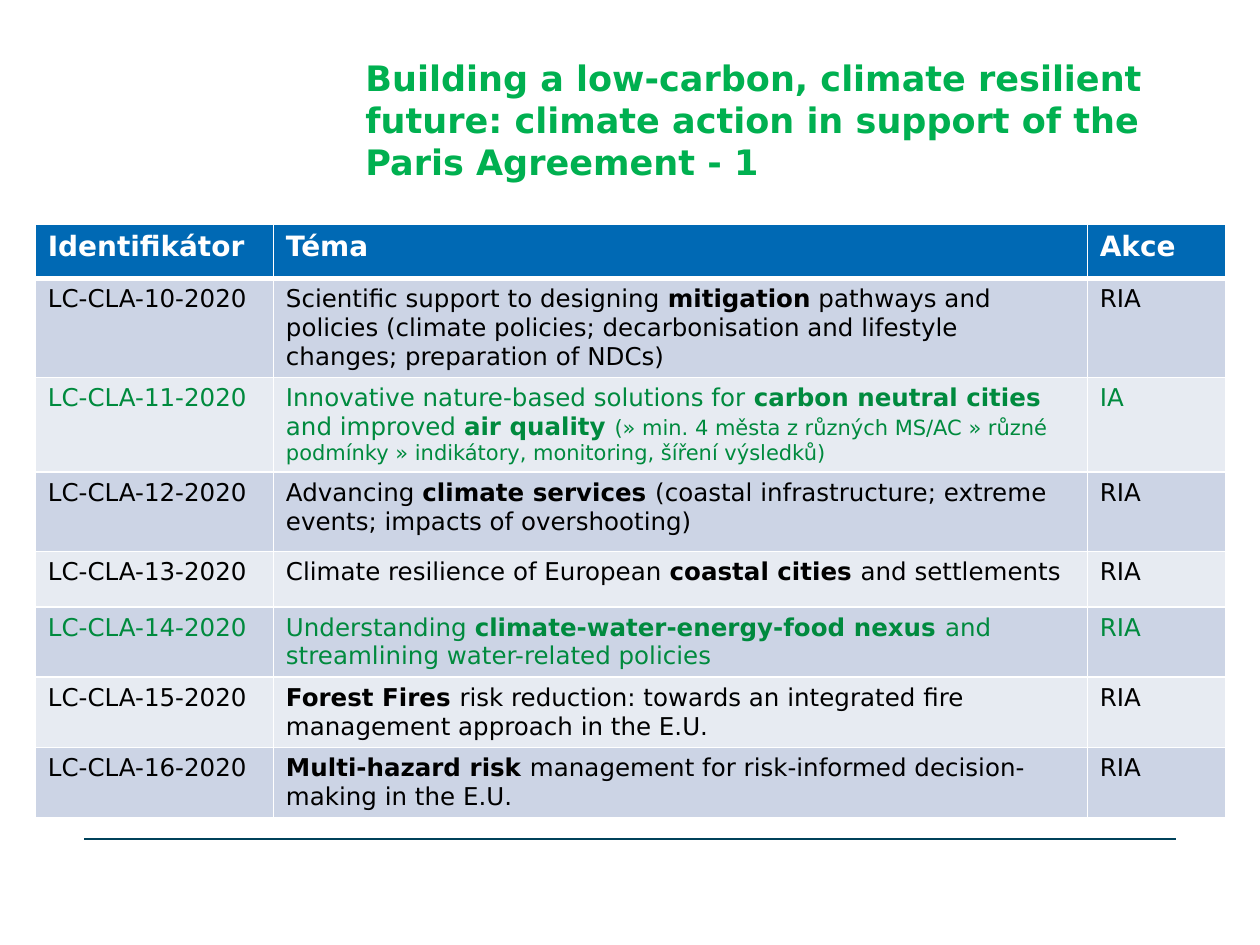
from dataclasses import dataclass

from lxml.etree import SubElement
from pptx import Presentation
from pptx.dml.color import RGBColor
from pptx.enum.shapes import MSO_CONNECTOR
from pptx.enum.text import MSO_ANCHOR, MSO_AUTO_SIZE, PP_ALIGN
from pptx.oxml.ns import qn
from pptx.util import Inches, Pt


@dataclass(frozen=True)
class Theme:
    font: str = "DejaVu Sans"
    title: str = "00B050"
    header: str = "0069B4"
    bands: tuple = ("CCD4E5", "E7EBF2")
    text: str = "000000"
    highlight: str = "008A3E"
    white: str = "FFFFFF"
    rule: str = "00415A"
    title_size: int = 20
    header_size: int = 16
    body_size: int = 14
    note_size: int = 12


HEADINGS = ("Identifikátor", "Téma", "Akce")
# Asterisks enclose bold words; a bar starts the smaller note.
TOPICS = [
    ("LC-CLA-10-2020", "Scientific support to designing *mitigation* pathways and policies "
     "(climate policies; decarbonisation and lifestyle changes; preparation of NDCs)", "RIA"),
    ("LC-CLA-11-2020", "Innovative nature-based solutions for *carbon neutral cities *"
     "and improved *air quality *|(» min. 4 města z různých MS/AC » různé podmínky "
     "» indikátory, monitoring, šíření výsledků)", "IA"),
    ("LC-CLA-12-2020", "Advancing *climate services *(coastal infrastructure; "
     "extreme events; impacts of overshooting)", "RIA"),
    ("LC-CLA-13-2020", "Climate resilience of European *coastal cities *and settlements", "RIA"),
    ("LC-CLA-14-2020", "Understanding *climate-water-energy-food nexus *and streamlining "
     "water-related policies", "RIA"),
    ("LC-CLA-15-2020", "*Forest Fires *risk reduction: towards an integrated fire "
     "management approach in the E.U.", "RIA"),
    ("LC-CLA-16-2020", "*Multi-hazard risk *management for risk-informed "
     "decision-making in the E.U.", "RIA"),
]
HIGHLIGHTED = {"LC-CLA-11-2020", "LC-CLA-14-2020"}
COLUMN_WIDTHS = (18.9, 64.6, 11)
ROW_HEIGHTS = (4.3, 5.9, 6.6, 6.3, 4.4, 4.5, 4.3, 4.3)


def grid(units):
    """Convert units of a grid of 100 columns by 75 rows to a length."""
    return Inches(units / 10)


def add_span(para, text, *, font, size, color, bold=False):
    span = para.add_run()
    span.text = text
    span.font.name = font
    span.font.size = Pt(size)
    span.font.bold = bold
    span.font.color.rgb = RGBColor.from_string(color)


def set_borders(cell, color, **widths):
    """Draw cell borders; L, R, T and B give widths in points, 1 by default."""
    properties = cell._tc.get_or_add_tcPr()
    for side in "LRTB":
        line = SubElement(properties, qn(f"a:ln{side}"), w=str(Pt(widths.get(side, 1))))
        fill = SubElement(line, qn("a:solidFill"))
        SubElement(fill, qn("a:srgbClr"), val=color)


class SlideBuilder:
    def __init__(self, deck, theme):
        self.theme = theme
        self.page = deck.slides.add_slide(deck.slide_layouts[5])

    def rule(self, left, right, top):
        line = self.page.shapes.add_connector(
            MSO_CONNECTOR.STRAIGHT, grid(left), grid(top), grid(right), grid(top))
        line.line.color.rgb = RGBColor.from_string(self.theme.rule)
        line.line.width = Pt(1)
        SubElement(line._element.spPr, qn("a:effectLst"))

    def title(self, text, left, top, width, height):
        box = self.page.shapes.title
        box.left, box.top, box.width, box.height = map(grid, (left, top, width, height))
        frame = box.text_frame
        frame.word_wrap = True
        frame.auto_size = MSO_AUTO_SIZE.NONE
        frame.vertical_anchor = MSO_ANCHOR.BOTTOM
        para = frame.paragraphs[0]
        para.alignment = PP_ALIGN.LEFT
        add_span(para, text, font=self.theme.font, size=self.theme.title_size,
                 color=self.theme.title, bold=True)

    def table(self, left, top, height):
        rows = [HEADINGS, *TOPICS]
        frame = self.page.shapes.add_table(
            len(rows), len(HEADINGS), grid(left), grid(top),
            grid(sum(COLUMN_WIDTHS)), grid(height))
        table = frame.table
        for column, width in zip(table.columns, COLUMN_WIDTHS):
            column.width = grid(width)
        for row, row_height in zip(table.rows, ROW_HEIGHTS):
            row.height = grid(row_height)
        frame.height = grid(height)
        for row_index, texts in enumerate(rows):
            for column_index, text in enumerate(texts):
                cell = table.cell(row_index, column_index)
                if row_index == 0:
                    self.header_cell(cell, text)
                else:
                    self.topic_cell(cell, text, row_index, texts[0] in HIGHLIGHTED)

    def fill_cell(self, cell, color, **widths):
        set_borders(cell, self.theme.white, **widths)
        cell.fill.solid()
        cell.fill.fore_color.rgb = RGBColor.from_string(color)

    def header_cell(self, cell, text):
        self.fill_cell(cell, self.theme.header, B=3)
        add_span(cell.text_frame.paragraphs[0], text, font=self.theme.font,
                 size=self.theme.header_size, color=self.theme.white, bold=True)

    def topic_cell(self, cell, text, row_index, highlighted):
        theme = self.theme
        self.fill_cell(cell, theme.bands[(row_index - 1) % 2], T=3 if row_index == 1 else 1)
        color = theme.highlight if highlighted else theme.text
        para = cell.text_frame.paragraphs[0]
        main, _, note = text.partition("|")
        for index, part in enumerate(main.split("*")):
            if part:
                add_span(para, part, font=theme.font, size=theme.body_size,
                         color=color, bold=index % 2 == 1)
        if note:
            add_span(para, note, font=theme.font, size=theme.note_size, color=color)


def main():
    deck = Presentation()
    deck.slide_width, deck.slide_height = grid(100), grid(75)
    slide = SlideBuilder(deck, Theme())
    slide.rule(6.7, 93.3, 66.6)
    slide.title("Building a low-carbon, climate resilient future: climate action "
                "in support of the Paris Agreement - 1", 28, 4, 66.3, 11)
    slide.table(2.8, 17.8, 47.7)
    deck.save("out.pptx")


if __name__ == "__main__":
    main()
